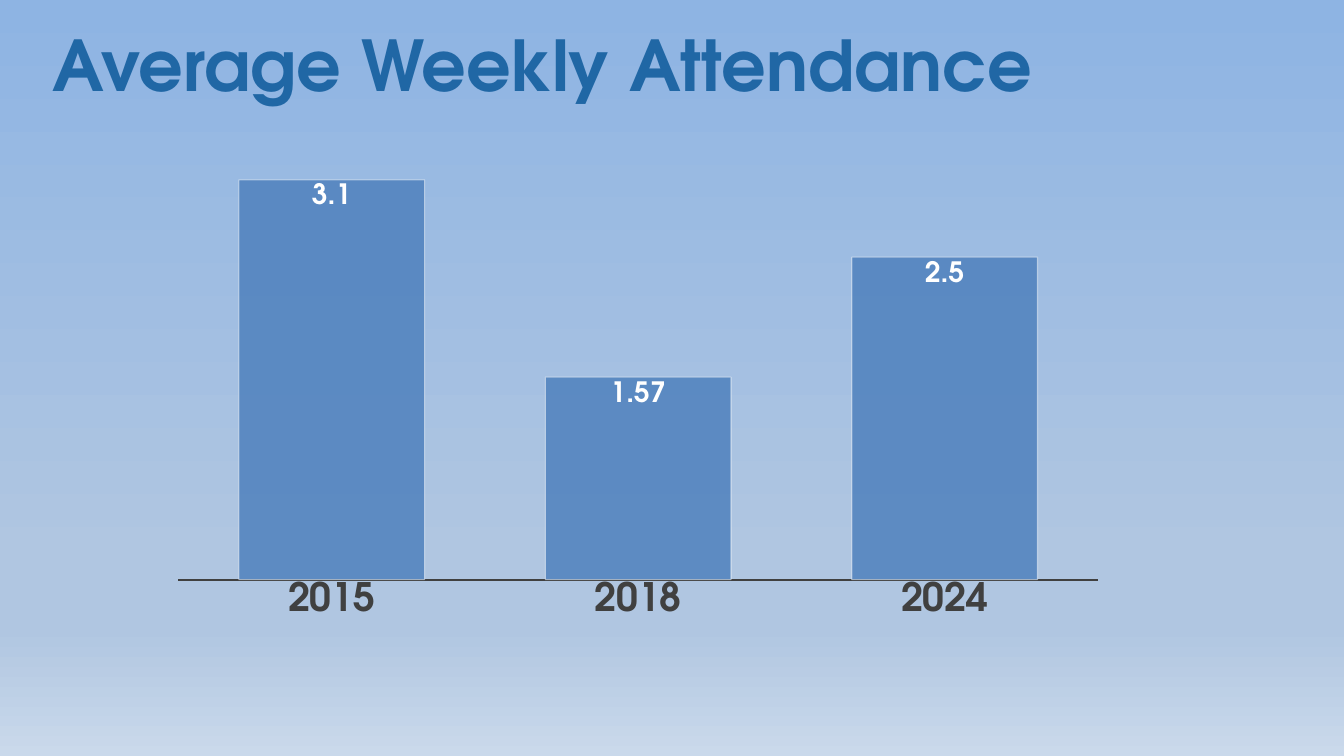
from typing import NamedTuple

from lxml import etree
from pptx import Presentation
from pptx.chart.chart import Chart
from pptx.chart.data import CategoryChartData
from pptx.dml.color import RGBColor
from pptx.enum.chart import XL_CHART_TYPE, XL_LABEL_POSITION, XL_TICK_LABEL_POSITION, XL_TICK_MARK
from pptx.enum.text import MSO_ANCHOR, MSO_AUTO_SIZE, PP_ALIGN
from pptx.oxml import parse_xml
from pptx.oxml.ns import nsdecls, qn
from pptx.slide import Slide
from pptx.text.text import Font
from pptx.util import Inches, Pt

COLORS = {
    "title": "2067A5",
    "bar": "4F81BD",
    "axis": "404040",
    "white": "FFFFFF",
    "text": "000000",
    "sky": "8EB4E3",
    "haze": "B0C6E1",
    "horizon": "CAD9EB",
}
HEADING_FONT = "TeX Gyre Adventor"


class GradientStop(NamedTuple):
    percent: int
    color: str


class Attendance(NamedTuple):
    year: str
    average: float


BACKGROUND_STOPS = [
    GradientStop(0, "sky"),
    GradientStop(74, "haze"),
    GradientStop(83, "haze"),
    GradientStop(100, "horizon"),
]
ATTENDANCE = [Attendance("2015", 3.1), Attendance("2018", 1.57), Attendance("2024", 2.5)]


def rgb(name: str) -> RGBColor:
    return RGBColor.from_string(COLORS[name])


def style_font(font: Font, size: float, color: str) -> None:
    font.name = HEADING_FONT
    font.size = Pt(size)
    font.bold = True
    font.color.rgb = rgb(color)


def set_opacity(properties: etree._Element, percent: int) -> None:
    """Make the solid colour inside a fill or line element partly transparent."""
    color = properties.find(f"{qn('a:solidFill')}/{qn('a:srgbClr')}")
    etree.SubElement(color, qn("a:alpha")).set("val", str(percent * 1000))


def paint_background(slide: Slide) -> None:
    fill = slide.background.fill
    fill.gradient()
    fill.gradient_angle = 270
    stop_list = slide.element.find(f".//{qn('a:gsLst')}")
    for old_stop in list(stop_list):
        stop_list.remove(old_stop)
    for stop in BACKGROUND_STOPS:
        stop_list.append(parse_xml(
            f'<a:gs {nsdecls("a")} pos="{stop.percent * 1000}">'
            f'<a:srgbClr val="{COLORS[stop.color]}"/></a:gs>'
        ))


def add_title(slide: Slide, text: str) -> None:
    title = slide.shapes.title
    title.left, title.top = Inches(0.42), Inches(0.01)
    title.width, title.height = Inches(12), Inches(1.25)
    frame = title.text_frame
    frame.text = text
    frame.auto_size = MSO_AUTO_SIZE.NONE
    frame.vertical_anchor = MSO_ANCHOR.MIDDLE
    paragraph = frame.paragraphs[0]
    paragraph.alignment = PP_ALIGN.LEFT
    style_font(paragraph.runs[0].font, 50, "title")


def set_plot_area(chart: Chart, x: float, y: float, w: float, h: float) -> None:
    """Fix the inner plot area, in fractions of the chart's size."""
    plot_area = chart.element.find(f".//{qn('c:plotArea')}")
    for old_layout in plot_area.findall(qn("c:layout")):
        plot_area.remove(old_layout)
    plot_area.insert(0, parse_xml(
        f'<c:layout {nsdecls("c")}><c:manualLayout><c:layoutTarget val="inner"/>'
        f'<c:xMode val="edge"/><c:yMode val="edge"/><c:x val="{x}"/><c:y val="{y}"/>'
        f'<c:w val="{w}"/><c:h val="{h}"/></c:manualLayout></c:layout>'
    ))


def style_axes(chart: Chart) -> None:
    years = chart.category_axis
    years.major_tick_mark = years.minor_tick_mark = XL_TICK_MARK.NONE
    years.tick_label_position = XL_TICK_LABEL_POSITION.NEXT_TO_AXIS
    years.has_major_gridlines = False
    years.format.line.color.rgb = rgb("axis")
    years.format.line.width = Pt(1.5)
    style_font(years.tick_labels.font, 28, "axis")

    values = chart.value_axis
    values.minimum_scale, values.maximum_scale = 0, 3.5
    values.has_major_gridlines = False
    values.visible = False


def style_bars(chart: Chart) -> None:
    plot = chart.plots[0]
    plot.gap_width = 65
    plot.vary_by_categories = False
    bars = plot.series[0]
    bars.invert_if_negative = False
    bars.format.fill.solid()
    bars.format.fill.fore_color.rgb = rgb("bar")
    bars.format.line.color.rgb = rgb("white")
    bars.format.line.width = Pt(0.75)
    properties = bars.format.fill._xPr
    set_opacity(properties, 85)
    set_opacity(properties.find(qn("a:ln")), 50)

    labels = bars.data_labels
    labels.show_value = True
    labels.position = XL_LABEL_POSITION.INSIDE_END
    style_font(labels.font, 20, "white")


def add_attendance_chart(slide: Slide) -> None:
    data = CategoryChartData()
    data.categories = [entry.year for entry in ATTENDANCE]
    data.add_series("Series 1", [entry.average for entry in ATTENDANCE])
    chart = slide.shapes.add_chart(
        XL_CHART_TYPE.COLUMN_CLUSTERED,
        Inches(1.58), Inches(1.17), Inches(9.5), Inches(5.09), data,
    ).chart
    chart.has_title = False
    chart.has_legend = False
    chart.font.name = "Calibri"
    chart.font.size = Pt(10)
    chart.font.color.rgb = rgb("text")
    set_plot_area(chart, 0.02, 0.02, 0.96, 0.88)
    style_axes(chart)
    style_bars(chart)


def main() -> None:
    presentation = Presentation()
    presentation.slide_width = Inches(13.33)
    presentation.slide_height = Inches(7.5)
    title_only = presentation.slide_layouts[5]
    slide = presentation.slides.add_slide(title_only)
    paint_background(slide)
    add_title(slide, "Average Weekly Attendance")
    add_attendance_chart(slide)
    presentation.save("out.pptx")


if __name__ == "__main__":
    main()
